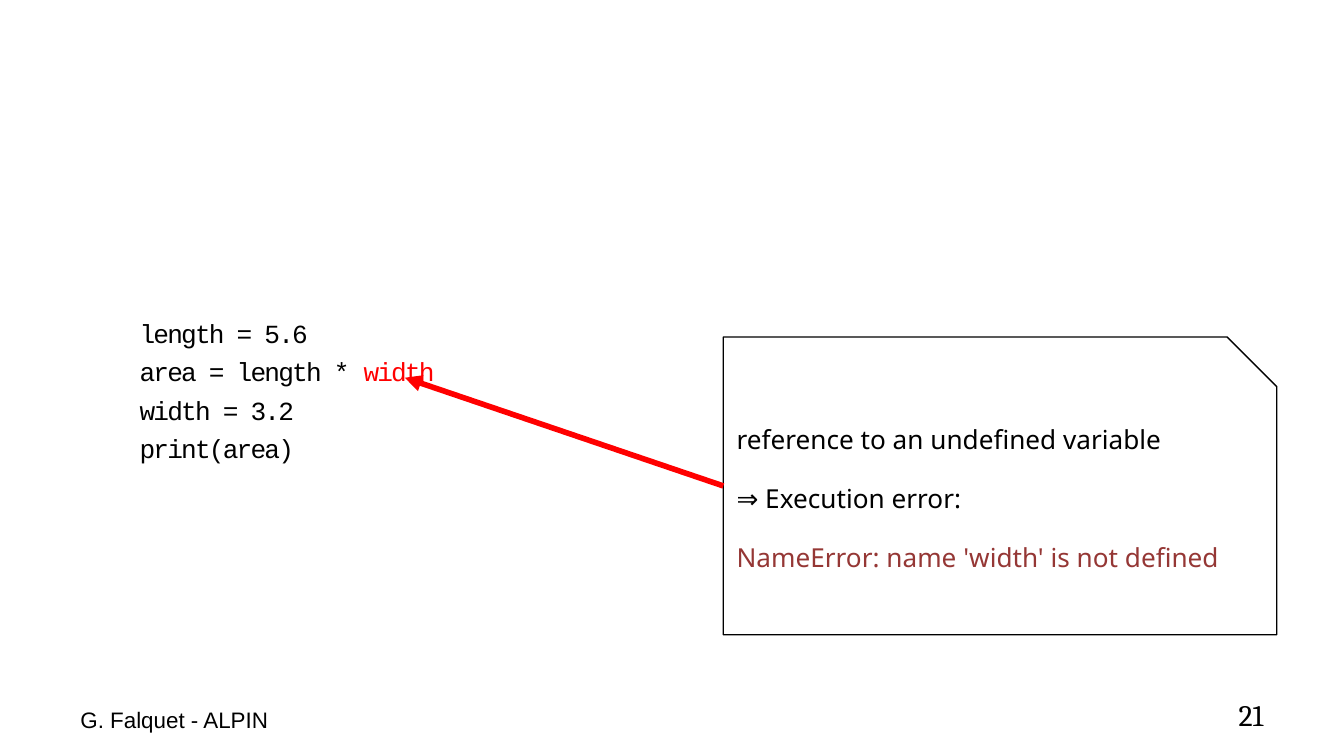
from dataclasses import dataclass

from lxml.etree import SubElement
from pptx import Presentation
from pptx.dml.color import RGBColor
from pptx.enum.shapes import MSO_CONNECTOR as Link, MSO_SHAPE as Shape
from pptx.enum.text import MSO_ANCHOR as Anchor, PP_ALIGN as Align
from pptx.oxml.ns import qn
from pptx.util import Cm, Pt


@dataclass(frozen=True)
class Theme:
    ink: str = "000000"
    paper: str = "FFFFFF"
    alert: str = "FF0000"
    error: str = "953735"
    code_font: str = "Courier New"
    note_font: str = "Noto Sans"
    footer_font: str = "Arial"
    number_font: str = "Cambria"
    body_size: int = 14
    footer_size: int = 12
    number_size: int = 16


class Builder:
    def __init__(self, page, theme):
        self.page = page
        self.theme = theme

    def add_lines(self, frame, lines, font, size, gap=0, align=Align.LEFT, tracking=0):
        """Each line is a list of (text, colour) spans."""
        frame.word_wrap = True
        for index, spans in enumerate(lines):
            para = frame.add_paragraph() if index else frame.paragraphs[0]
            para.alignment = align
            if index:
                para.space_before = Pt(gap)
            for text, colour in spans:
                span = para.add_run()
                span.text = text
                span.font.name = font
                span.font.size = Pt(size)
                span.font.color.rgb = RGBColor.from_string(colour)
                if tracking:
                    span._r.get_or_add_rPr().set("spc", str(tracking * 100))

    def text(self, left, top, width, height, lines, font, size,
             anchor=Anchor.BOTTOM, inset=None, **style):
        box = self.page.shapes.add_textbox(Cm(left), Cm(top), Cm(width), Cm(height))
        frame = box.text_frame
        frame.vertical_anchor = anchor
        if inset:
            frame.margin_left, frame.margin_top = map(Cm, inset)
        self.add_lines(frame, lines, font, size, **style)

    def note(self, left, top, width, height, lines, opacity, gap):
        theme = self.theme
        box = self.page.shapes.add_shape(
            Shape.SNIP_1_RECTANGLE, Cm(left), Cm(top), Cm(width), Cm(height))
        box.shadow.inherit = False
        box.fill.solid()
        box.fill.fore_color.rgb = RGBColor.from_string(theme.paper)
        colour = box._element.spPr.find(qn("a:solidFill"))[0]
        SubElement(colour, qn("a:alpha")).set("val", str(opacity * 1000))
        box.line.color.rgb = RGBColor.from_string(theme.ink)
        box.line.width = Pt(0.75)
        box.text_frame.vertical_anchor = Anchor.MIDDLE
        self.add_lines(box.text_frame, lines, theme.note_font, theme.body_size, gap=gap)
        return box

    def arrow(self, box, side, x, y):
        arrow = self.page.shapes.add_connector(
            Link.STRAIGHT, box.left, box.top, Cm(x), Cm(y))
        arrow.begin_connect(box, side)
        arrow.line.color.rgb = RGBColor.from_string(self.theme.alert)
        arrow.line.width = Pt(3)
        outline = arrow._element.spPr.find(qn("a:ln"))
        SubElement(outline, qn("a:tailEnd")).set("type", "triangle")
        SubElement(arrow._element.spPr, qn("a:effectLst"))


def main():
    deck = Presentation()
    deck.slide_width, deck.slide_height = Cm(25.4), Cm(14.29)
    theme = Theme()
    builder = Builder(deck.slides.add_slide(deck.slide_layouts[6]), theme)
    ink = theme.ink

    # Code sample
    code = [
        [("length = 5.6", ink)],
        [("area = length * ", ink), ("width", theme.alert)],
        [("width = 3.2", ink)],
        [("print(area)", ink)],
    ]
    builder.text(1.27, 3.18, 22.86, 9.32, code, theme.code_font, theme.body_size,
                 anchor=Anchor.TOP, inset=(1.37, 2.82), gap=3.8, tracking=-1)

    # Page number
    builder.text(18.2, 13, 5.93, 0.97, [[("21", ink)]],
                 theme.number_font, theme.number_size, align=Align.RIGHT)

    # Explanation, pointing at the undefined variable
    explanation = [
        [("reference to an undefined variable", ink)],
        [("⇒ Execution error:", ink)],
        [("NameError: name 'width' is not defined", theme.error)],
    ]
    note = builder.note(13.67, 6.37, 10.46, 5.63, explanation, opacity=78, gap=14.7)
    builder.arrow(note, 1, 7.65, 7.14)

    # Footer
    builder.text(1.27, 13, 5.93, 0.99, [[("G. Falquet - ALPIN", ink)]],
                 theme.footer_font, theme.footer_size)

    deck.save("out.pptx")


if __name__ == "__main__":
    main()
